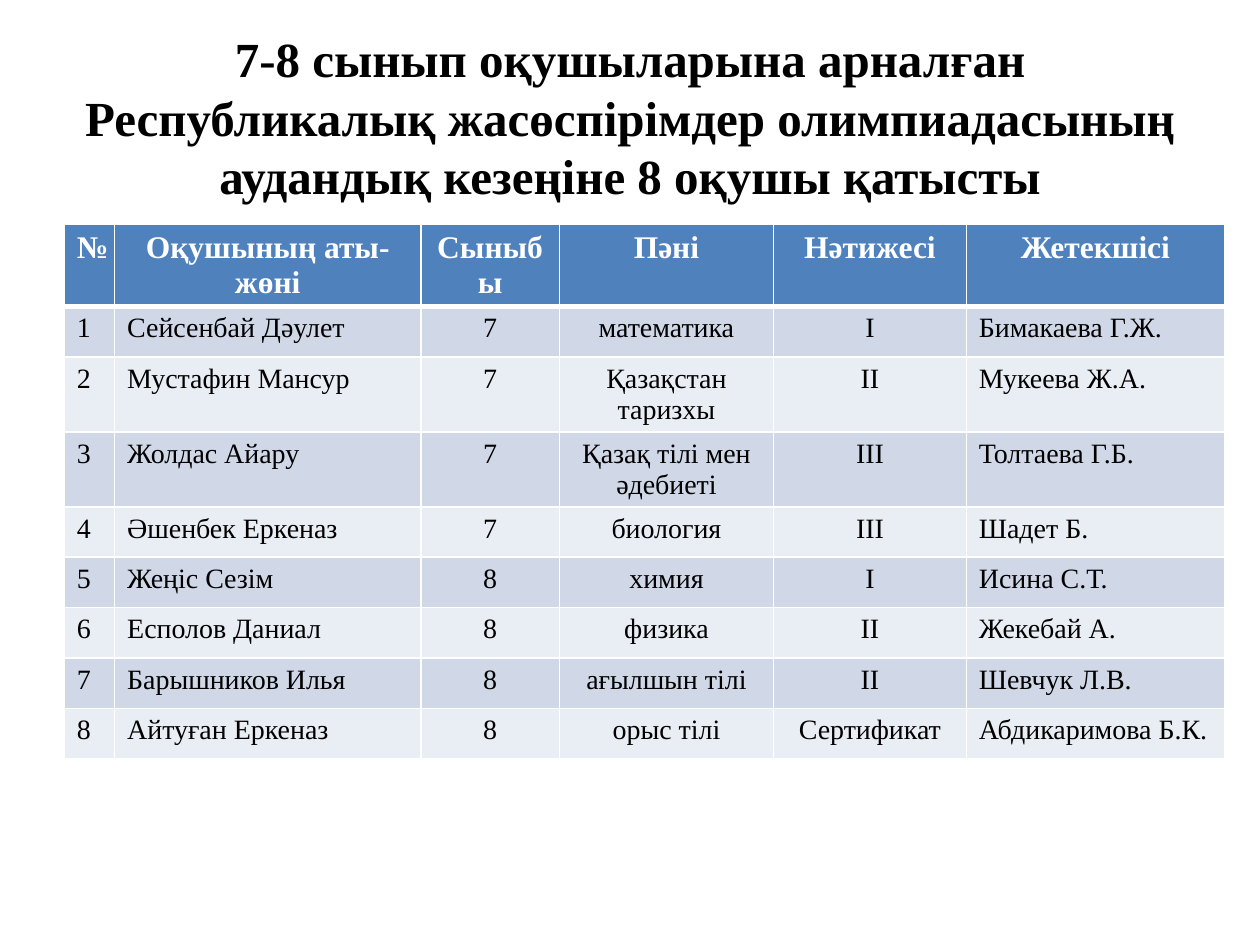
from lxml import etree
from pptx import Presentation
from pptx import util as u
from pptx.dml.color import RGBColor
from pptx.enum import text
from pptx.oxml.ns import qn

COLORS = {"header": "4F81BD", "odd": "D0D8E8", "even": "E9EDF4",
          "light": "FFFFFF", "dark": "000000"}
FONT = "Times New Roman"
HEADING = "7-8 сынып оқушыларына арналған Республикалық жасөспірімдер олимпиадасының аудандық кезеңіне 8 оқушы қатысты"
RESULTS = [
    ("№", "Оқушының аты-жөні", "Сыныбы", "Пәні", "Нәтижесі", "Жетекшісі"),
    ("1", "Сейсенбай Дәулет", "7", "математика", "І", "Бимакаева Г.Ж."),
    ("2", "Мустафин Мансур", "7", "Қазақстан таризхы", "ІІ", "Мукеева Ж.А."),
    ("3", "Жолдас Айару", "7", "Қазақ тілі мен әдебиеті", "ІІІ", "Толтаева Г.Б."),
    ("4", "Әшенбек Еркеназ", "7", "биология", "ІІІ", "Шадет Б."),
    ("5", "Жеңіс Сезім", "8", "химия", "І", "Исина С.Т."),
    ("6", "Есполов Даниал", "8", "физика", "ІІ", "Жекебай А."),
    ("7", "Барышников Илья", "8", "ағылшын тілі", "ІІ", "Шевчук Л.В."),
    ("8", "Айтуған Еркеназ", "8", "орыс тілі", "Сертификат", "Абдикаримова Б.К."),
]
COLUMN_WIDTHS = [0.4, 2.43, 1.1, 1.7, 1.53, 2.05]
ROW_HEIGHTS = [0.48, 0.4, 0.43] + [0.4] * 6
CENTERED_COLUMNS = (2, 3, 4)


def write(frame, wording, size, color, bold, align):
    paragraph = frame.paragraphs[0]
    paragraph.alignment = align
    run = paragraph.add_run()
    run.text = wording
    for name, value in {"name": FONT, "size": u.Pt(size), "bold": bold}.items():
        setattr(run.font, name, value)
    run.font.color.rgb = RGBColor.from_string(COLORS[color])


def add_borders(cell, bottom_width):
    """Draw white borders; call before the fill, which must follow them."""
    properties = cell._tc.get_or_add_tcPr()
    for side, width in {"lnL": 1, "lnR": 1, "lnT": 1, "lnB": bottom_width}.items():
        line = etree.SubElement(properties, qn("a:" + side), w=str(u.Pt(width)))
        fill = etree.SubElement(line, qn("a:solidFill"))
        etree.SubElement(fill, qn("a:srgbClr"), val=COLORS["light"])


deck = Presentation()
deck.slide_width, deck.slide_height = u.Inches(10), u.Inches(7.5)
slide = deck.slides.add_slide(deck.slide_layouts[5])

heading = slide.shapes.title
for side, share in {"left": 0.05, "width": 0.9}.items():
    setattr(heading, side, int(deck.slide_width * share))
for side, share in {"top": 0.04, "height": 1 / 6}.items():
    setattr(heading, side, int(deck.slide_height * share))
heading.text_frame.vertical_anchor = text.MSO_ANCHOR.MIDDLE
write(heading.text_frame, HEADING, 28, "dark", True, text.PP_ALIGN.CENTER)

results = slide.shapes.add_table(
    len(RESULTS), len(COLUMN_WIDTHS), u.Inches(0.51), u.Inches(1.78),
    u.Inches(sum(COLUMN_WIDTHS)), u.Inches(sum(ROW_HEIGHTS))).table
for column, width in zip(results.columns, COLUMN_WIDTHS):
    column.width = u.Inches(width)

for r, (entry, height) in enumerate(zip(RESULTS, ROW_HEIGHTS)):
    results.rows[r].height = u.Inches(height)
    is_header = r == 0
    band = "header" if is_header else "odd" if r % 2 else "even"
    for c, wording in enumerate(entry):
        cell = results.cell(r, c)
        add_borders(cell, 3 if is_header else 1)
        cell.fill.solid()
        cell.fill.fore_color.rgb = RGBColor.from_string(COLORS[band])
        centered = is_header or c in CENTERED_COLUMNS
        write(cell.text_frame, wording, 18 if is_header else 16,
              "light" if is_header else "dark", is_header,
              text.PP_ALIGN.CENTER if centered else text.PP_ALIGN.LEFT)

deck.save("out.pptx")
